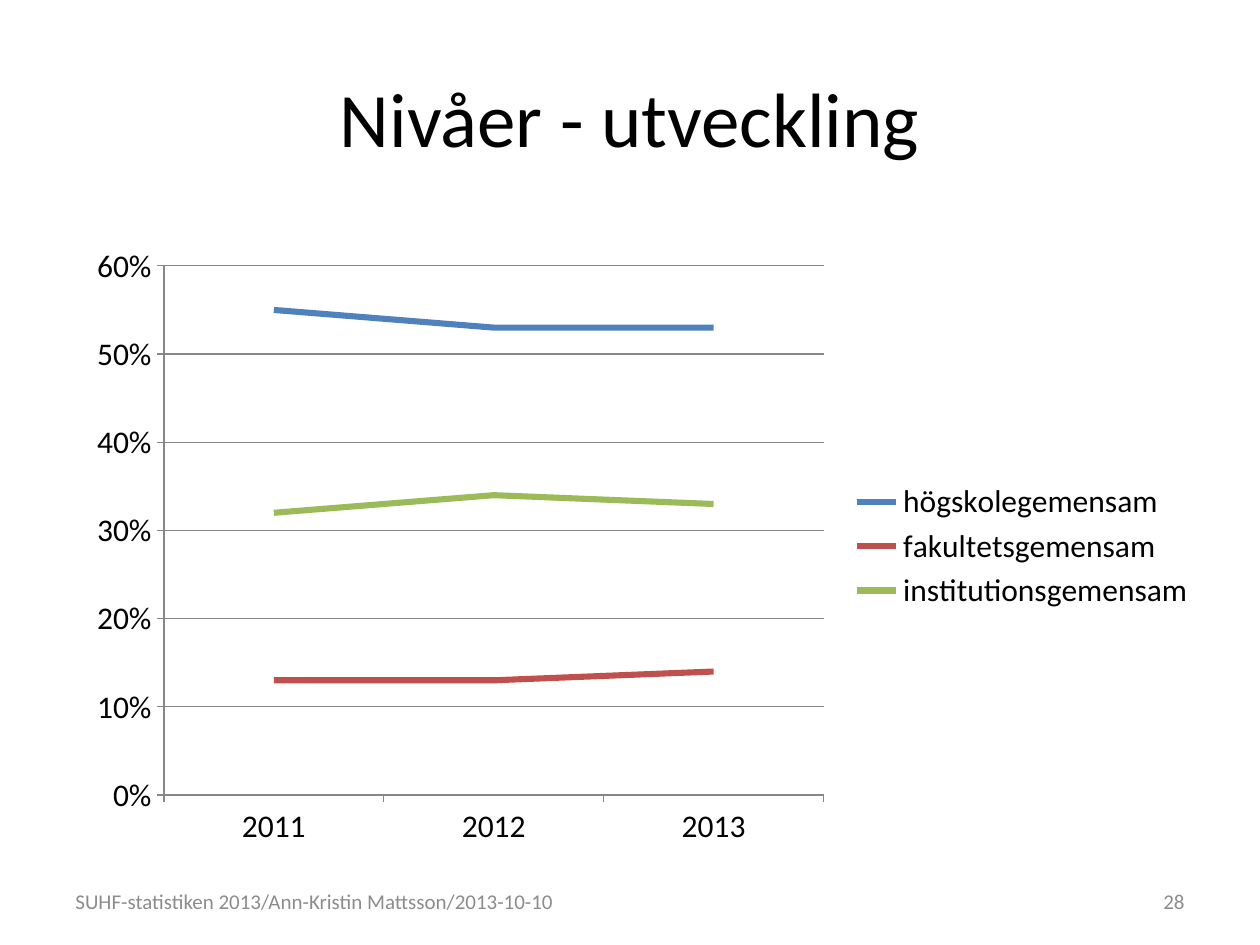
from pptx import Presentation
from pptx.chart.data import CategoryChartData
from pptx.dml.color import RGBColor
from pptx.enum.chart import XL_CHART_TYPE, XL_LEGEND_POSITION, XL_MARKER_STYLE, XL_TICK_MARK
from pptx.enum.text import MSO_ANCHOR, PP_ALIGN
from pptx.util import Inches, Pt

LINE = XL_CHART_TYPE.LINE
RIGHT_LEGEND = XL_LEGEND_POSITION.RIGHT
NO_MARKER = XL_MARKER_STYLE.NONE
OUTSIDE = XL_TICK_MARK.OUTSIDE
MIDDLE = MSO_ANCHOR.MIDDLE
LEFT, CENTER, RIGHT = PP_ALIGN.LEFT, PP_ALIGN.CENTER, PP_ALIGN.RIGHT
FONT = "Calibri"
AXIS_GRAY = "868686"


def color(value):
    return RGBColor.from_string(value)


def write_text(shape, text, size, text_color, alignment):
    text_frame = shape.text_frame
    text_frame.text = text
    text_frame.word_wrap = True
    text_frame.vertical_anchor = MIDDLE
    paragraph = text_frame.paragraphs[0]
    paragraph.alignment = alignment
    font = paragraph.runs[0].font
    font.name = FONT
    font.size = Pt(size)
    font.color.rgb = color(text_color)


presentation = Presentation()
presentation.slide_width = Inches(10)
presentation.slide_height = Inches(7.5)
slide = presentation.slides.add_slide(presentation.slide_layouts[5])

title = slide.shapes.title
title.left, title.top = Inches(0.5), Inches(0.3)
title.width, title.height = Inches(9), Inches(1.25)
write_text(title, "Nivåer - utveckling", 44, "000000", CENTER)

footers = [
    ("SUHF-statistiken 2013/Ann-Kristin Mattsson/2013-10-10", 0.5, 5.05, LEFT),
    ("28", 7.17, 2.33, RIGHT),
]
for text, left, width, alignment in footers:
    footer = slide.shapes.add_textbox(Inches(left), Inches(6.95), Inches(width), Inches(0.4))
    write_text(footer, text, 12, "8C8C8C", alignment)

levels = [
    ("högskolegemensam", (0.55, 0.53, 0.53), "4F81BD"),
    ("fakultetsgemensam", (0.13, 0.13, 0.14), "C0504D"),
    ("institutionsgemensam", (0.32, 0.34, 0.33), "9BBB59"),
]
chart_data = CategoryChartData(number_format="0%")
chart_data.categories = ["2011", "2012", "2013"]
for name, values, line_color in levels:
    chart_data.add_series(name, values)

chart = slide.shapes.add_chart(
    LINE, Inches(0.59), Inches(1.86), Inches(9), Inches(4.95), chart_data
).chart
chart.has_title = False
chart.font.name = FONT
chart.font.size = Pt(18)
chart.font.color.rgb = color("000000")
chart.has_legend = True
chart.legend.position = RIGHT_LEGEND
chart.legend.include_in_layout = False
chart.legend.font.size = Pt(18)
chart.plots[0].vary_by_categories = False

for series, (name, values, line_color) in zip(chart.plots[0].series, levels):
    series.smooth = False
    series.marker.style = NO_MARKER
    series.format.line.width = Pt(3.5)
    series.format.line.color.rgb = color(line_color)

value_axis = chart.value_axis
value_axis.minimum_scale = 0
value_axis.maximum_scale = 0.6
value_axis.major_unit = 0.1
value_axis.has_major_gridlines = True
value_axis.tick_labels.number_format = "0%"
value_axis.tick_labels.number_format_is_linked = False

for axis in (chart.category_axis, value_axis):
    axis.major_tick_mark = OUTSIDE
    axis.tick_labels.font.size = Pt(18)
for part in (chart.category_axis, value_axis, value_axis.major_gridlines):
    part.format.line.width = Pt(0.75)
    part.format.line.color.rgb = color(AXIS_GRAY)

presentation.save("out.pptx")
